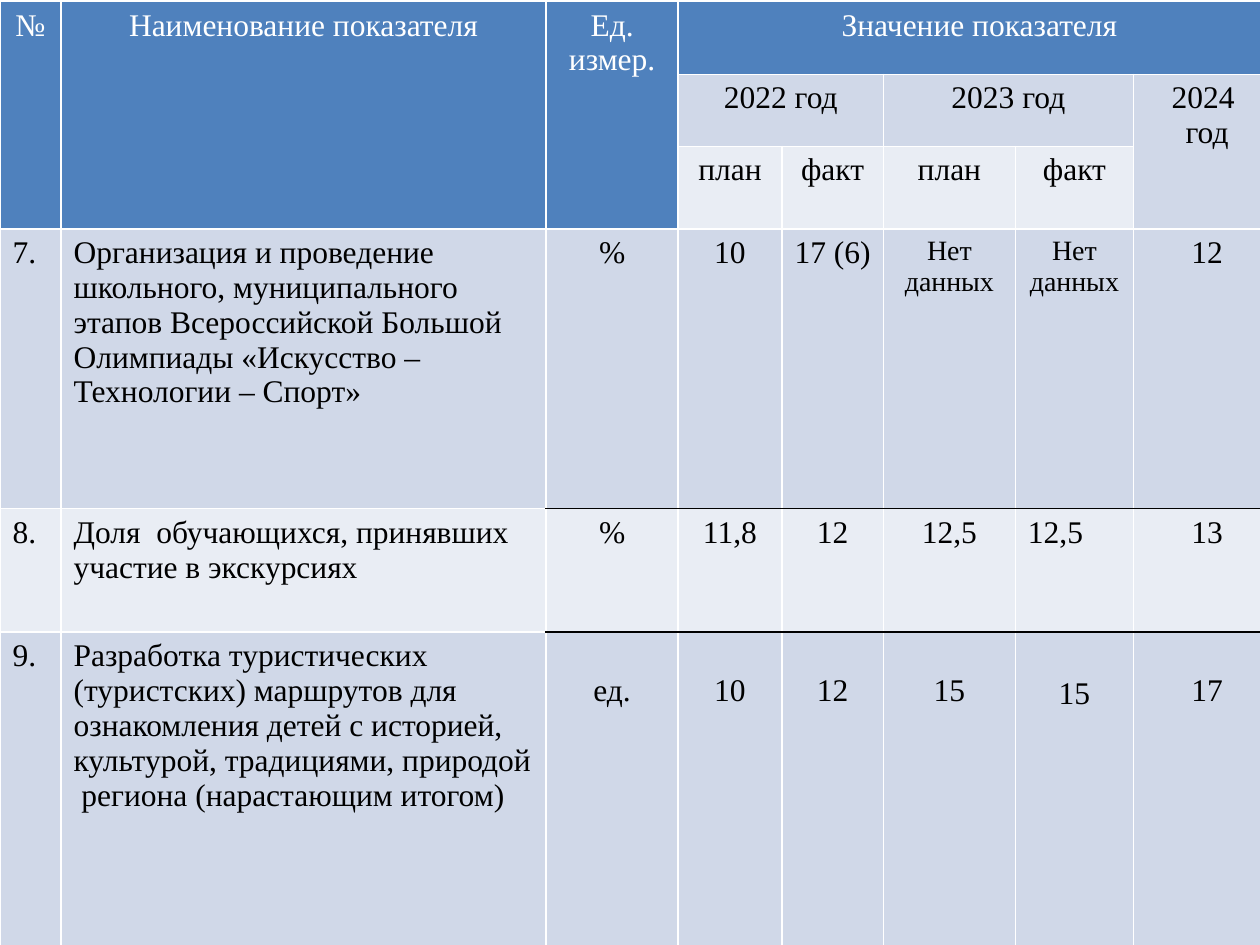
from lxml.etree import SubElement
from pptx import Presentation
from pptx.dml.color import RGBColor
from pptx.enum.text import PP_ALIGN as Align
from pptx.oxml.ns import qn
from pptx.util import Cm, Pt

WHITE = RGBColor(0xFF, 0xFF, 0xFF)
BLACK = RGBColor(0x00, 0x00, 0x00)
BLUE = RGBColor(0x4F, 0x81, 0xBD)
BAND_DARK = RGBColor(0xD0, 0xD8, 0xE8)
BAND_LIGHT = RGBColor(0xE9, 0xED, 0xF4)
FONT = "Times New Roman"

WIDTHS = [1.23, 9.78, 2.66, 2.09, 2.05, 2.66, 2.38, 2.97]
HEIGHTS = [1.47, 1.45, 1.4, 5.64, 2.49, 6.55]
MERGES = [
    ((0, 0), (2, 0)), ((0, 1), (2, 1)), ((0, 2), (2, 2)), ((0, 3), (0, 7)),
    ((1, 3), (1, 4)), ((1, 5), (1, 6)), ((1, 7), (2, 7)),
]
ROWS = [
    ["№", "Наименование показателя", "Ед. измер.", "Значение показателя", "", "", "", ""],
    ["", "", "", "2022 год", "", "2023 год", "", "2024 \nгод"],
    ["", "", "", "план", "факт", "план", "факт", ""],
    ["7.", "Организация и проведение школьного, муниципального этапов Всероссийской "
     "Большой Олимпиады «Искусство –Технологии – Спорт»",
     "%", "10", "17 (6)", "Нет данных", "Нет данных", "12"],
    ["8.", "Доля  обучающихся, принявших участие в экскурсиях",
     "%", "11,8", "12", "12,5", "12,5", "13"],
    ["9.", "Разработка туристических (туристских) маршрутов для ознакомления детей "
     "с историей, культурой, традициями, природой  региона (нарастающим итогом)",
     "ед.", "10", "12", "15", "15", "17"],
]
FIRST_DATA_ROW = 3
LAST_ROW = len(ROWS) - 1
FIRST_VALUE_COLUMN = 2


def write_cell(cell, text, size=18, color=BLACK, align=Align.CENTER, top=0.13):
    """Fill a cell with formatted text, one paragraph for each line."""
    cell.margin_top = Cm(top)
    cell.text = text
    for para in cell.text_frame.paragraphs:
        para.alignment = align
        for span in para.runs:
            span.font.name = FONT
            span.font.size = Pt(size)
            span.font.color.rgb = color


def paint_cell(cell, fill, top=WHITE, bottom=WHITE):
    """Set the borders and the fill of a cell."""
    props = cell._tc.get_or_add_tcPr()
    sides = {"a:lnL": WHITE, "a:lnR": WHITE, "a:lnT": top, "a:lnB": bottom}
    for side, color in sides.items():
        line = SubElement(props, qn(side), w=str(Pt(1)))
        solid = SubElement(line, qn("a:solidFill"))
        SubElement(solid, qn("a:srgbClr"), val=str(color))
    cell.fill.solid()
    cell.fill.fore_color.rgb = fill


def text_format(row, column):
    """Return the text format that belongs to a place in the table."""
    style = {}
    if row == 0:
        style["color"] = WHITE
    if row >= FIRST_DATA_ROW and column < FIRST_VALUE_COLUMN or (row, column) == (4, 6):
        style["align"] = Align.LEFT
    if row == FIRST_DATA_ROW and column in (5, 6):
        style["size"] = 16
    if row == LAST_ROW and column >= FIRST_VALUE_COLUMN:
        style["top"] = 0.9 if column == 6 else 0.83
    return style


def cell_colors(row, column):
    """Return the fill and the border colours for a place in the table."""
    header = row == 0 or row < FIRST_DATA_ROW and column <= FIRST_VALUE_COLUMN
    fill = BLUE if header else BAND_DARK if row % 2 else BAND_LIGHT
    ruled = column >= FIRST_VALUE_COLUMN
    return {
        "fill": fill,
        "top": BLACK if ruled and row > FIRST_DATA_ROW else WHITE,
        "bottom": BLACK if ruled and FIRST_DATA_ROW <= row < LAST_ROW else WHITE,
    }


def add_indicator_table(page):
    """Add the table of indicators to the page."""
    frame = page.shapes.add_table(
        len(ROWS), len(WIDTHS), Cm(0), Cm(0.03), Cm(sum(WIDTHS)), Cm(sum(HEIGHTS)))
    table = frame.table
    for column, width in zip(table.columns, WIDTHS):
        column.width = Cm(width)
    for row, height in zip(table.rows, HEIGHTS):
        row.height = Cm(height)
    for start, end in MERGES:
        table.cell(*start).merge(table.cell(*end))
    for row, texts in enumerate(ROWS):
        for column, text in enumerate(texts):
            cell = table.cell(row, column)
            paint_cell(cell, **cell_colors(row, column))
            if text:
                write_cell(cell, text, **text_format(row, column))


def main():
    """Build the deck and save it."""
    deck = Presentation()
    deck.slide_width, deck.slide_height = Cm(25.4), Cm(19.05)
    page = deck.slides.add_slide(deck.slide_layouts[6])
    add_indicator_table(page)
    deck.save("out.pptx")


if __name__ == "__main__":
    main()
